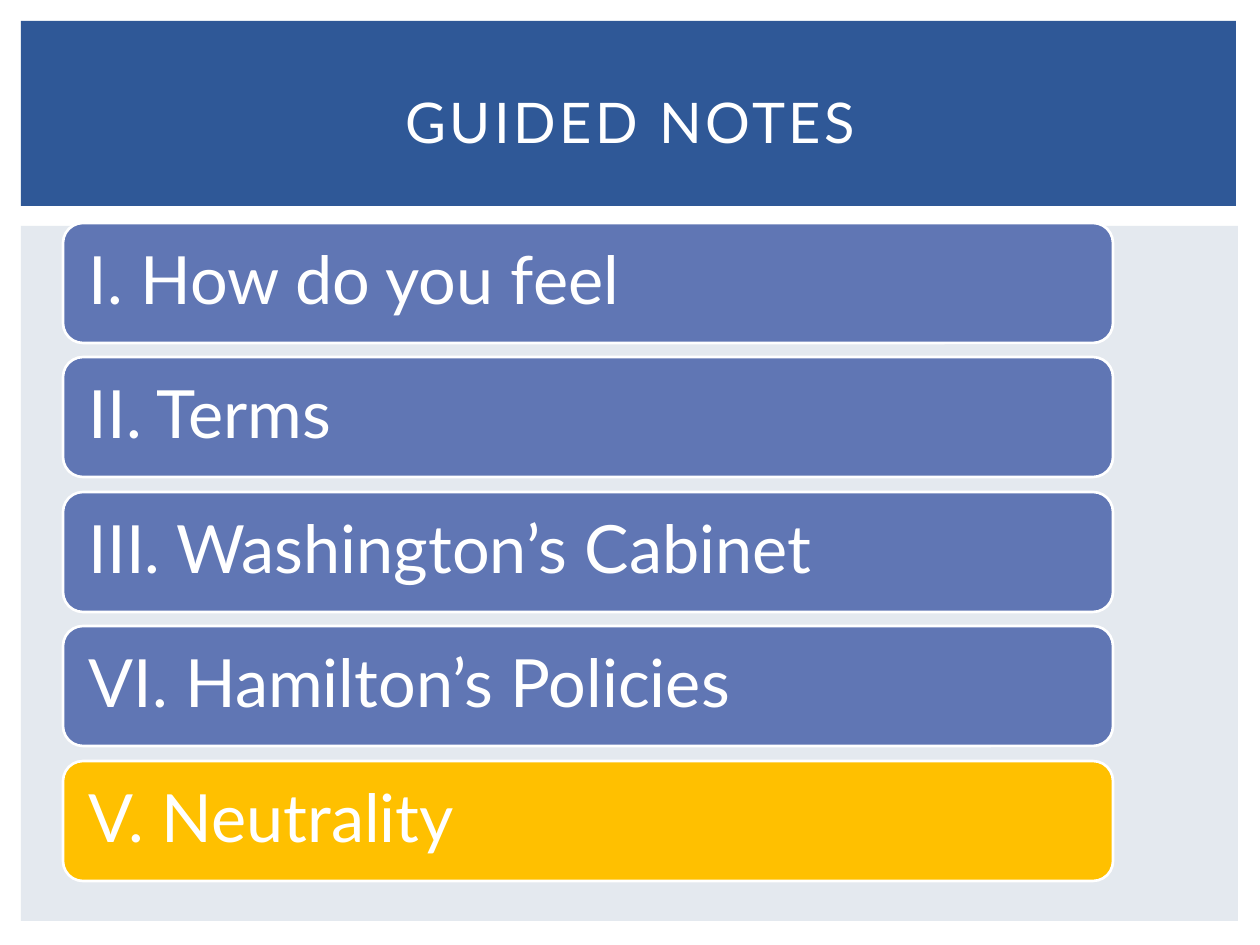
from pptx import Presentation
from pptx.dml.color import RGBColor
from pptx.enum.shapes import MSO_SHAPE as Shape
from pptx.enum.text import MSO_ANCHOR as Anchor, PP_ALIGN as Align
from pptx.util import Pt

EMU_PER_PX = 914400 / 126
COLORS = {
    "panel": "E4E9EF",
    "banner": "2F5897",
    "topic": "6076B4",
    "current": "FFC000",
    "white": "FFFFFF",
}
TOPICS = [
    "I. How do you feel",
    "II. Terms",
    "III. Washington’s Cabinet",
    "VI. Hamilton’s Policies",
    "V. Neutrality",
]


def px(length):
    return round(length * EMU_PER_PX)


def rgb(name):
    return RGBColor.from_string(COLORS[name])


class NotesSlide:
    """Guided notes style together with the slide being built."""

    font = "Lato"

    def __init__(self, slide):
        self.slide = slide

    def block(self, kind, left, top, width, height, fill):
        block = self.slide.shapes.add_shape(kind, px(left), px(top), px(width), px(height))
        block.shadow.inherit = False
        block.fill.solid()
        block.fill.fore_color.rgb = rgb(fill)
        block.line.fill.background()
        return block

    def label(self, holder, words, size, align):
        frame = holder.text_frame
        frame.text = words
        frame.word_wrap = True
        frame.vertical_anchor = Anchor.MIDDLE
        paragraph = frame.paragraphs[0]
        paragraph.alignment = align
        run = paragraph.runs[0]
        run.font.name = self.font
        run.font.size = Pt(size)
        run.font.color.rgb = rgb("white")
        return paragraph

    def topic(self, words, left, top, width, height, fill):
        card = self.block(Shape.ROUNDED_RECTANGLE, left, top, width, height, fill)
        card.line.color.rgb = rgb("white")
        card.line.width = Pt(1.5)
        frame = card.text_frame
        frame.margin_left = frame.margin_right = px(20)
        frame.margin_top = frame.margin_bottom = px(20)
        self.label(card, words, 38, Align.LEFT).line_spacing = 0.9

    def title(self, words, left, top, width, height):
        title = self.slide.shapes.title
        title.left, title.top, title.width, title.height = map(px, (left, top, width, height))
        heading = self.label(title, words, 32, Align.CENTER)
        heading.runs[0].font._element.set("spc", "200")
        self.slide.shapes._spTree.append(title._element)


def main():
    deck = Presentation()
    deck.slide_width, deck.slide_height = px(1260), px(945)
    notes = NotesSlide(deck.slides.add_slide(deck.slide_layouts[5]))
    notes.block(Shape.RECTANGLE, 21, 226, 1217, 695, "panel")
    notes.block(Shape.RECTANGLE, 21, 21, 1215, 185, "banner")
    for index, words in enumerate(TOPICS):
        fill = "current" if words == TOPICS[-1] else "topic"
        notes.topic(words, 63, 223 + 269 * index // 2, 1050, 120, fill)
    notes.title("GUIDED NOTES", 53, 49, 1155, 145)
    deck.save("out.pptx")


if __name__ == "__main__":
    main()
